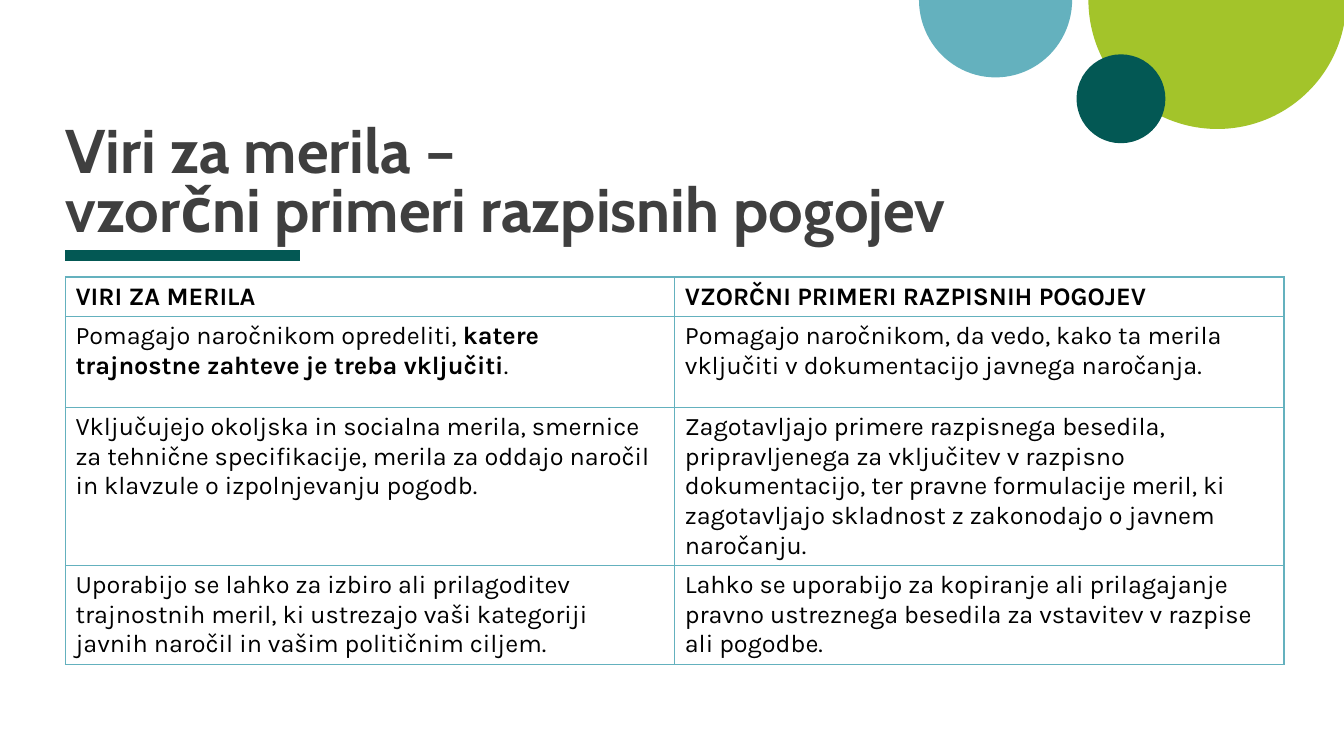
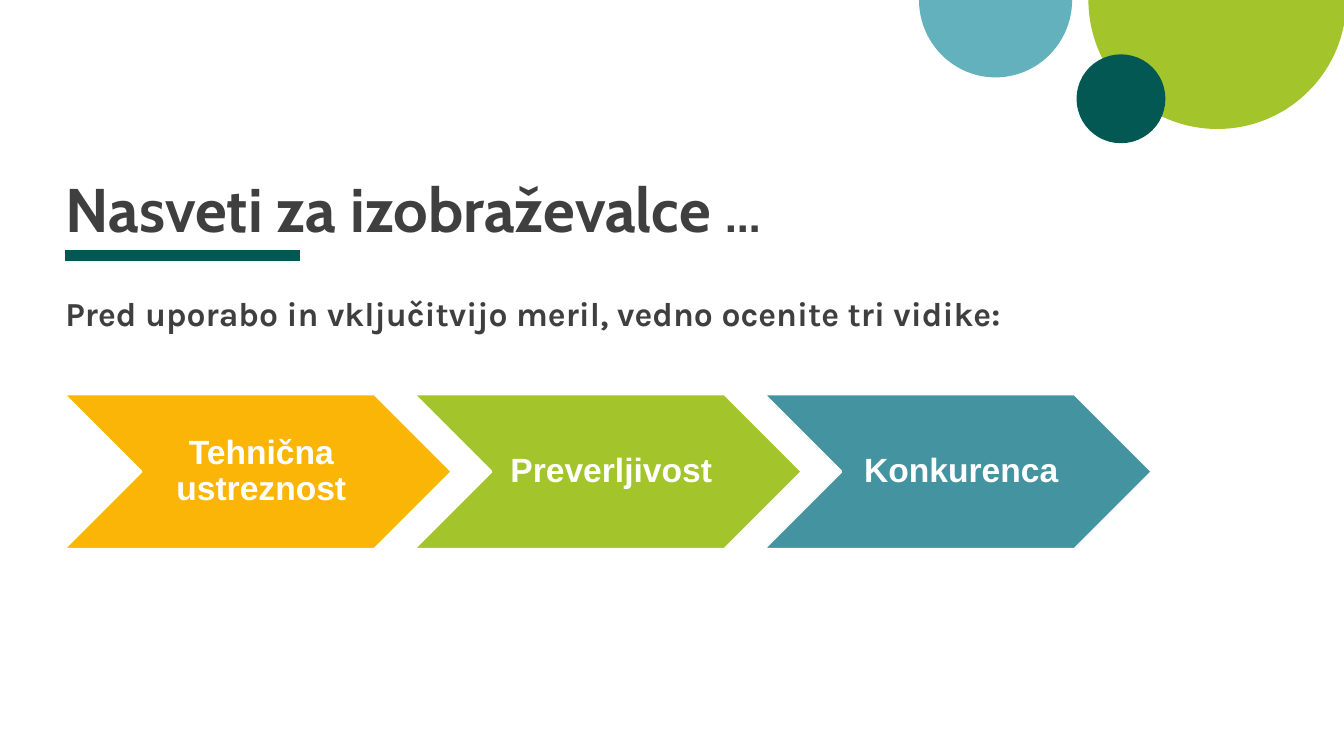
import pptx
import pptx.dml.color
import pptx.enum.shapes
import pptx.enum.text
import pptx.oxml
import pptx.oxml.ns
import pptx.util

Cm = pptx.util.Cm
Pt = pptx.util.Pt
RGB = pptx.dml.color.RGBColor
SHAPE = pptx.enum.shapes.MSO_SHAPE
ALIGN = pptx.enum.text.PP_ALIGN
ANCHOR = pptx.enum.text.MSO_ANCHOR

WHITE = RGB(0xFF, 0xFF, 0xFF)
BLACK = RGB(0, 0, 0)
GREY = RGB(0x3F, 0x3F, 0x3F)
PINE = RGB(0x03, 0x58, 0x54)
LIME = RGB(0xA3, 0xC4, 0x2A)
SKY = RGB(0x64, 0xB1, 0xBE)
TEAL = RGB(0x43, 0x93, 0xA0)
GOLD = RGB(0xFA, 0xB5, 0x06)

LEFT, WIDTH = 1.65, 30.71

CIRCLES = [
    (SHAPE.PIE, 27.43, -3.25, 6.5, 6.5, LIME),
    (SHAPE.PIE, 23.16, -1.96, 3.86, 3.91, SKY),
    (SHAPE.OVAL, 27.13, 1.37, 2.24, 2.24, PINE),
]

TITLES = [
    [("Viri za merila –\nvzorčni primeri razpisnih pogojev", {})],
    [("Nasveti za izobraževalce ", {}), ("…", {"size": 36})],
]

HEADS = ["VIRI ZA MERILA", "VZORČNI PRIMERI RAZPISNIH POGOJEV"]
ROWS = [
    (
        [
            ("Pomagajo naročnikom opredeliti, ", {}),
            ("katere trajnostne zahteve je treba vključiti", {"bold": True}),
            (".", {}),
        ],
        "Pomagajo naročnikom, da vedo, kako ta merila vključiti v "
        "dokumentacijo javnega naročanja.",
    ),
    (
        "Vključujejo okoljska in socialna merila, smernice za tehnične "
        "specifikacije, merila za oddajo naročil in klavzule o "
        "izpolnjevanju pogodb.",
        "Zagotavljajo primere razpisnega besedila, pripravljenega za "
        "vključitev v razpisno dokumentacijo, ter pravne formulacije meril, "
        "ki zagotavljajo skladnost z zakonodajo o javnem naročanju.",
    ),
    (
        "Uporabijo se lahko za izbiro ali prilagoditev trajnostnih meril, "
        "ki ustrezajo vaši kategoriji javnih naročil in vašim političnim "
        "ciljem.",
        "Lahko se uporabijo za kopiranje ali prilagajanje pravno ustreznega "
        "besedila za vstavitev v razpise ali pogodbe.",
    ),
]
HEIGHTS = [0.97, 2.29, 3.66, 2.41]

LEAD = "Pred uporabo in vključitvijo meril, vedno ocenite tri vidike:"
STEPS = [
    ("Tehnična ustreznost", GOLD),
    ("Preverljivost", LIME),
    ("Konkurenca", TEAL),
]


def write(frame, text, font="Karla", size=18, color=BLACK, bold=False,
          align=ALIGN.LEFT, space=1.0):
    para = frame.paragraphs[0]
    para.alignment = align
    para.line_spacing = space
    runs = [(text, {})] if isinstance(text, str) else text
    for words, style in runs:
        for num, line in enumerate(words.split("\n")):
            if num:
                para.add_line_break()
            run = para.add_run()
            run.text = line
            run.font.name = font
            run.font.size = Pt(style.get("size", size))
            run.font.bold = style.get("bold", bold)
            run.font.color.rgb = color


def inset(frame, left=0, rest=0):
    frame.margin_left = Cm(left)
    frame.margin_top = frame.margin_right = frame.margin_bottom = Cm(rest)
    frame.word_wrap = True
    frame.auto_size = pptx.enum.text.MSO_AUTO_SIZE.NONE


def draw(slide, kind, left, top, width, height, color):
    shape = slide.shapes.add_shape(
        kind, Cm(left), Cm(top), Cm(width), Cm(height))
    shape.shadow.inherit = False
    shape.fill.solid()
    shape.fill.fore_color.rgb = color
    shape.line.fill.background()
    return shape


def adorn(slide):
    rule = slide.shapes.add_connector(
        pptx.enum.shapes.MSO_CONNECTOR.STRAIGHT,
        Cm(LEFT), Cm(6.43), Cm(7.57), Cm(6.43))
    rule.line.color.rgb = PINE
    rule.line.width = Pt(8)
    rule.element.spPr.append(pptx.oxml.parse_xml(
        f"<a:effectLst {pptx.oxml.ns.nsdecls('a')}/>"))
    parts = [rule]
    for kind, *place in CIRCLES:
        shape = draw(slide, kind, *place)
        if kind == SHAPE.PIE:
            shape.adjustments[0] = 0
            shape.adjustments[1] = 108
        parts.append(shape)
    tree = slide.slide_layout.shapes.element
    for part in parts:
        tree.append(part.element)


def start(deck, text):
    slide = deck.slides.add_slide(deck.slide_layouts[5])
    title = slide.shapes.title
    title.left, title.top = Cm(LEFT), Cm(4.67)
    title.width, title.height = Cm(WIDTH), Cm(1.5)
    frame = title.text_frame
    inset(frame)
    frame.vertical_anchor = ANCHOR.BOTTOM
    write(frame, text, font="Cabin", size=44, color=GREY, bold=True, space=0.8)
    return slide


def edge(cell):
    props = cell._tc.get_or_add_tcPr()
    for side in "LRTB":
        props.append(pptx.oxml.parse_xml(
            f'<a:ln{side} {pptx.oxml.ns.nsdecls("a")} w="12700">'
            f'<a:solidFill><a:srgbClr val="{SKY}"/></a:solidFill>'
            f'</a:ln{side}>'))


def fill_table(slide):
    rows = [HEADS, *ROWS]
    table = slide.shapes.add_table(
        len(rows), len(HEADS), Cm(LEFT), Cm(6.98),
        Cm(WIDTH), Cm(sum(HEIGHTS))).table
    table.horz_banding = False
    for y, row in enumerate(rows):
        table.rows[y].height = Cm(HEIGHTS[y])
        for x, text in enumerate(row):
            cell = table.cell(y, x)
            edge(cell)
            cell.fill.background()
            write(cell.text_frame, text, bold=y == 0)


def fill_steps(slide):
    lead = slide.shapes.add_textbox(
        Cm(LEFT), Cm(7.37), Cm(WIDTH), Cm(0.86)).text_frame
    inset(lead)
    write(lead, LEAD, size=24, color=GREY, bold=True)
    width = 9.8
    for num, (text, color) in enumerate(STEPS):
        step = draw(slide, SHAPE.CHEVRON, 1.6 + num * width * 0.9, 9.93,
                    width, 3.91, color)
        step.line.color.rgb = WHITE
        step.line.width = Pt(2)
        frame = step.text_frame
        inset(frame, left=0.25, rest=0.08)
        frame.vertical_anchor = ANCHOR.MIDDLE
        write(frame, text, font="Arial", size=24, color=WHITE, bold=True,
              align=ALIGN.CENTER, space=0.9)


def main():
    deck = pptx.Presentation()
    deck.slide_width, deck.slide_height = Cm(33.87), Cm(19.05)
    first, second = [start(deck, text) for text in TITLES]
    adorn(first)
    fill_table(first)
    fill_steps(second)
    deck.save("out.pptx")


if __name__ == "__main__":
    main()
